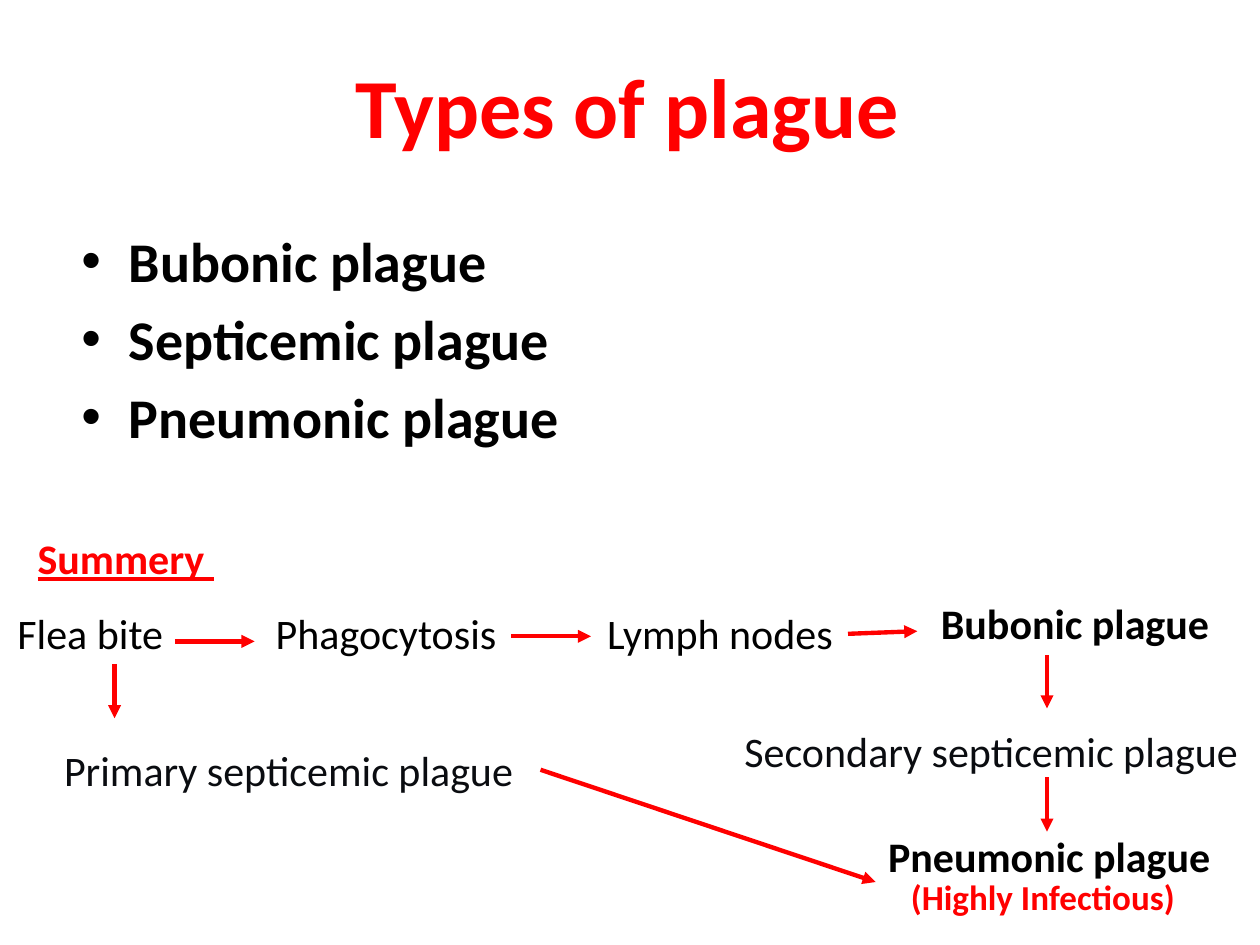
from lxml import etree
from pptx import Presentation
from pptx.dml.color import RGBColor
from pptx.enum.shapes import MSO_CONNECTOR
from pptx.enum.text import MSO_ANCHOR, PP_ALIGN
from pptx.oxml.ns import qn
from pptx.util import Pt

STRAIGHT = MSO_CONNECTOR.STRAIGHT
TOP, MIDDLE = MSO_ANCHOR.TOP, MSO_ANCHOR.MIDDLE
LEFT, CENTER = PP_ALIGN.LEFT, PP_ALIGN.CENTER
FONT = "Calibri"
RED, BLACK, INK = "FF0000", "000000", "0A0C10"

TITLE = "Types of plague"
TYPES = ["Bubonic plague", "Septicemic plague", "Pneumonic plague"]
LABELS = [
    ("Summery ", (14.4, 301, 116, 36), dict(color=RED, bold=True, underline=True)),
    ("Flea bite", (2.9, 343.5, 98.6, 36), {}),
    ("Phagocytosis", (150.5, 343.5, 141.8, 36), {}),
    ("Lymph nodes", (339.8, 343.5, 150.5, 36), {}),
    ("Bubonic plague", (530.6, 337.7, 169.2, 36), dict(bold=True)),
    ("Primary septicemic plague", (29.5, 421.9, 279.4, 36), dict(color=INK)),
    ("Secondary septicemic plague", (418.3, 411.1, 304.6, 36), dict(color=INK)),
    ("Pneumonic plague", (500.4, 470.9, 200.2, 65.5), dict(bold=True)),
    ("(Highly Infectious)", (513.4, 496.8, 167, 31.7), dict(size=20, color=RED, bold=True)),
]
ARROWS = [
    (100, 366.5, 145.5, 366.5),
    (292.3, 363.6, 337.7, 363.6),
    (484.6, 362.2, 524.2, 360.7),
    (65.5, 379.4, 65.5, 410.4),
    (598.3, 374.4, 598.3, 404.8),
    (598.3, 444.2, 598.3, 475.2),
    (308.9, 439.9, 500.4, 504),
]


def rgb(value):
    return RGBColor.from_string(value)


def add_text(page, text, area, size=24, color=BLACK, bold=False, underline=False,
             align=LEFT, anchor=TOP, wrap=False, bullet_indent=0, space_before=0):
    box = page.shapes.add_textbox(*map(Pt, area))
    frame = box.text_frame
    frame.word_wrap = wrap
    frame.vertical_anchor = anchor
    frame.text = text
    for para in frame.paragraphs:
        para.alignment = align
        para.space_before = Pt(space_before)
        font = para.runs[0].font
        font.name, font.size = FONT, Pt(size)
        font.bold, font.underline = bold, underline
        font.color.rgb = rgb(color)
        if bullet_indent:
            properties = para._p.get_or_add_pPr()
            properties.set("marL", str(Pt(bullet_indent)))
            properties.set("indent", str(-Pt(bullet_indent)))
            etree.SubElement(properties, qn("a:buFont"), typeface="Arial")
            etree.SubElement(properties, qn("a:buChar"), char="•")


def add_arrow(page, ends):
    arrow = page.shapes.add_connector(STRAIGHT, *map(Pt, ends))
    arrow.line.color.rgb = rgb(RED)
    arrow.line.width = Pt(2.5)
    etree.SubElement(arrow.line._get_or_add_ln(), qn("a:tailEnd"), type="triangle")
    etree.SubElement(arrow._element.spPr, qn("a:effectLst"))


def main():
    deck = Presentation()
    deck.slide_width, deck.slide_height = Pt(720), Pt(540)
    page = deck.slides.add_slide(deck.slide_layouts[6])
    add_text(page, TITLE, (34.5, 15, 648, 90), size=48, color=RED, bold=True,
             align=CENTER, anchor=MIDDLE, wrap=True)
    add_text(page, "\n".join(TYPES), (39.5, 126, 648, 356.4), size=32, bold=True,
             wrap=True, bullet_indent=27, space_before=6)
    for text, area, style in LABELS:
        add_text(page, text, area, **style)
    for ends in ARROWS:
        add_arrow(page, ends)
    deck.save("out.pptx")


if __name__ == "__main__":
    main()
